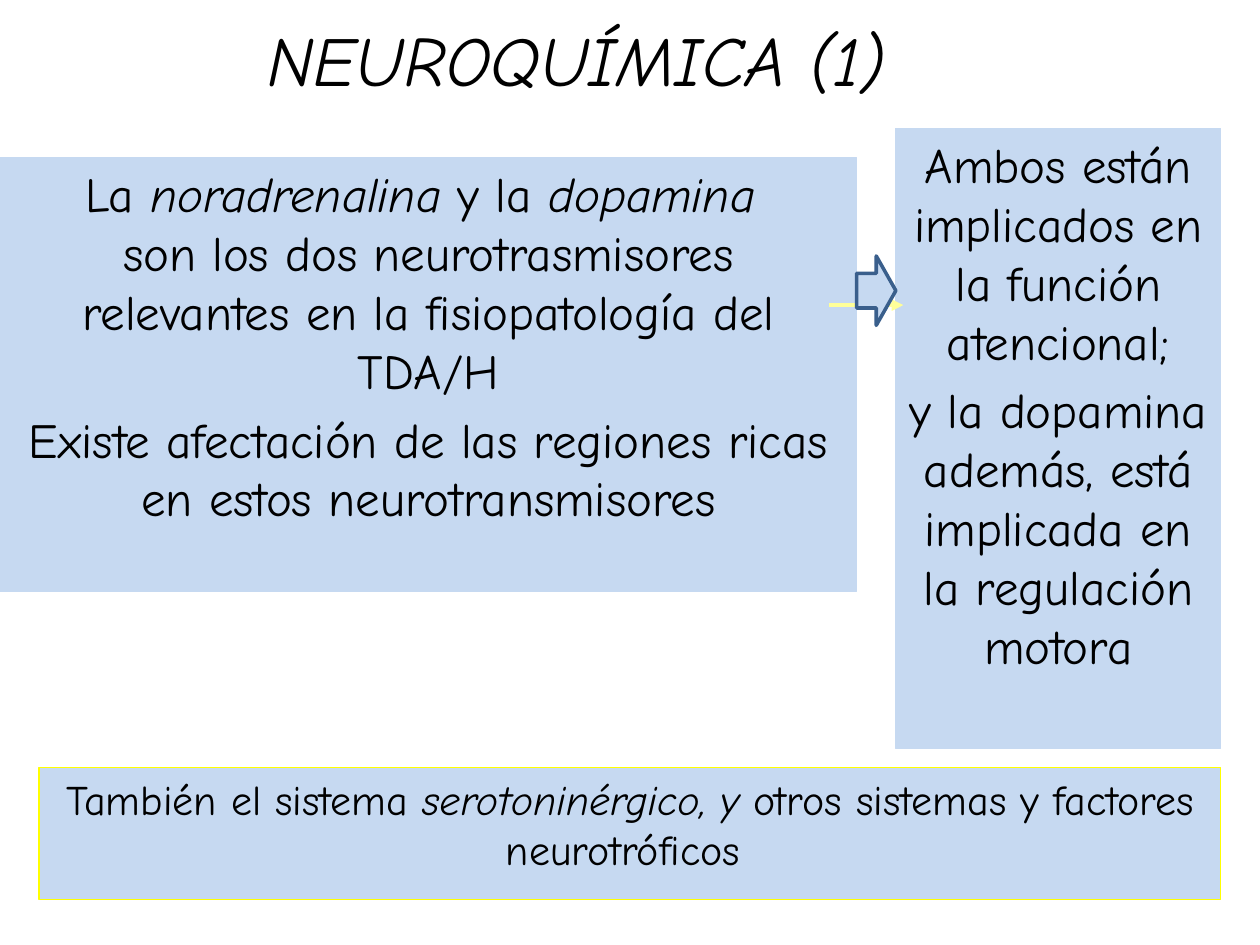
from lxml import etree
from pptx import Presentation
from pptx.dml.color import RGBColor
from pptx.enum.shapes import MSO_CONNECTOR, MSO_SHAPE
from pptx.enum.text import MSO_ANCHOR, MSO_AUTO_SIZE, PP_ALIGN
from pptx.oxml.ns import qn
from pptx.util import Cm, Pt

RECTANGLE = MSO_SHAPE.RECTANGLE
RIGHT_ARROW = MSO_SHAPE.RIGHT_ARROW
STRAIGHT = MSO_CONNECTOR.STRAIGHT
CENTER = PP_ALIGN.CENTER
MIDDLE = MSO_ANCHOR.MIDDLE
TOP = MSO_ANCHOR.TOP
NO_AUTOFIT = MSO_AUTO_SIZE.NONE

BLACK = RGBColor(0x00, 0x00, 0x00)
PALE_BLUE = RGBColor(0xC6, 0xD9, 0xF1)
STEEL_BLUE = RGBColor(0x3A, 0x5F, 0x8C)
YELLOW = RGBColor(0xFF, 0xFF, 0x00)
PALE_YELLOW = RGBColor(0xFF, 0xFF, 0x99)

TITLE_ONLY = 5
PARAGRAPH_GAP = Pt(5.6)


class SlideBuilder:
    font = "Comic Neue"

    def __init__(self, slide):
        self.slide = slide

    def fill_text(self, shape, paragraphs, size, anchor=TOP):
        """Each paragraph is (space before, [(text, italic), ...])."""
        frame = shape.text_frame
        frame.word_wrap = True
        frame.auto_size = NO_AUTOFIT
        frame.vertical_anchor = anchor
        for index, (space_before, runs) in enumerate(paragraphs):
            paragraph = frame.add_paragraph() if index else frame.paragraphs[0]
            paragraph.alignment = CENTER
            paragraph.space_before = space_before
            for text, italic in runs:
                run = paragraph.add_run()
                run.text = text
                run.font.name = self.font
                run.font.size = Pt(size)
                run.font.italic = italic
                run.font.color.rgb = BLACK

    def title(self, text, left, top, width, height):
        title = self.slide.shapes.title
        title.left, title.top = Cm(left), Cm(top)
        title.width, title.height = Cm(width), Cm(height)
        self.fill_text(title, [(Pt(0), [(text, True)])], 40, MIDDLE)

    def block(self, kind, left, top, width, height, line_color, line_width=0.75):
        shape = self.slide.shapes.add_shape(
            kind, Cm(left), Cm(top), Cm(width), Cm(height))
        shape.shadow.inherit = False
        shape.fill.solid()
        shape.fill.fore_color.rgb = PALE_BLUE
        shape.line.color.rgb = line_color
        shape.line.width = Pt(line_width)
        return shape

    def text_box(self, left, top, width, height, paragraphs,
                 size=28, line_color=PALE_BLUE):
        box = self.block(RECTANGLE, left, top, width, height, line_color)
        self.fill_text(box, paragraphs, size)

    def arrow_line(self, start, end, y):
        connector = self.slide.shapes.add_connector(
            STRAIGHT, Cm(start), Cm(y), Cm(end), Cm(y))
        connector.line.color.rgb = PALE_YELLOW
        connector.line.width = Pt(2.25)
        properties = connector.element.spPr
        outline = properties.find(qn("a:ln"))
        etree.SubElement(outline, qn("a:tailEnd"), type="triangle")
        etree.SubElement(properties, qn("a:effectLst"))


def main():
    presentation = Presentation()
    presentation.slide_width = Cm(25.4)
    presentation.slide_height = Cm(19.05)
    slide = presentation.slides.add_slide(presentation.slide_layouts[TITLE_ONLY])
    builder = SlideBuilder(slide)

    builder.title("NEUROQUÍMICA (1)", 1.78, 0, 19.68, 2.34)
    builder.text_box(18.06, 2.59, 6.55, 12.5, [
        (Pt(0), [("Ambos están implicados en la función atencional;", False)]),
        (PARAGRAPH_GAP, [("y la dopamina además, está implicada en la "
                          "regulación motora", False)]),
    ])
    builder.text_box(0, 3.18, 17.27, 8.74, [
        (Pt(0), [("La ", False), ("noradrenalina", True),
                 (" y la ", False), ("dopamina ", True)]),
        (Pt(0), [("son los dos neurotrasmisores relevantes en la "
                  "fisiopatología del TDA/H", False)]),
        (PARAGRAPH_GAP, [("Existe afectación de las regiones ricas en estos "
                          "neurotransmisores", False)]),
    ])
    builder.arrow_line(16.71, 18.21, 6.15)
    builder.text_box(0.79, 15.47, 23.82, 2.67, [
        (Pt(0), [("También el sistema ", False), ("serotoninérgico, y ", True),
                 ("otros sistemas y factores neurotróficos ", False)]),
    ], size=24, line_color=YELLOW)
    builder.block(RIGHT_ARROW, 17.27, 5.16, 0.79, 1.4, STEEL_BLUE, 2)

    presentation.save("out.pptx")


if __name__ == "__main__":
    main()
